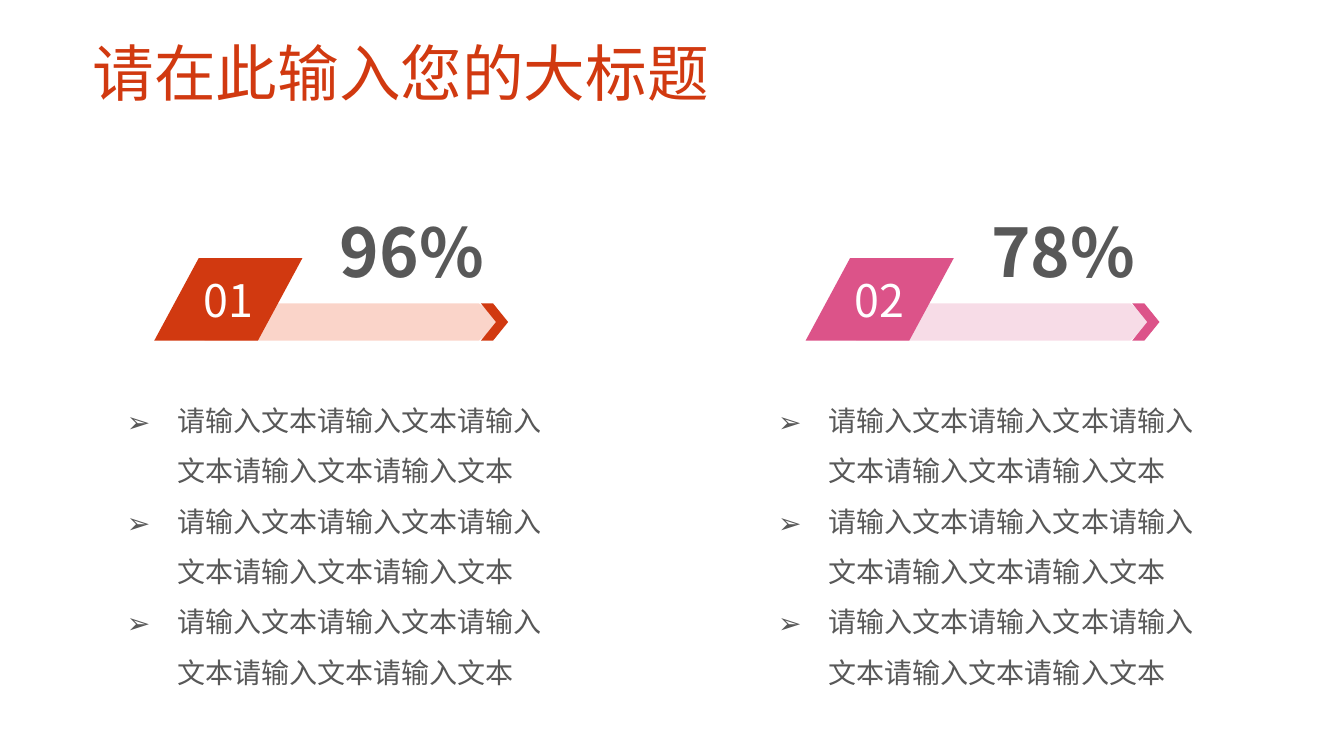
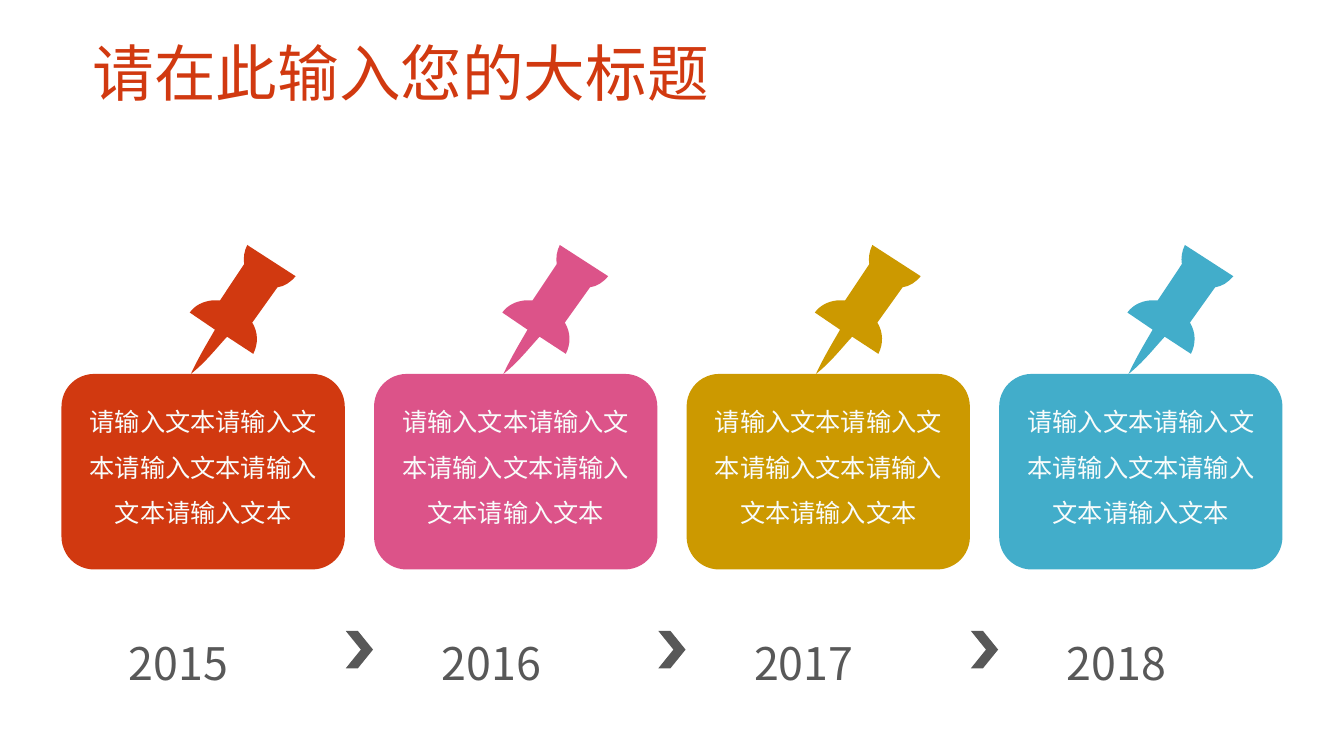
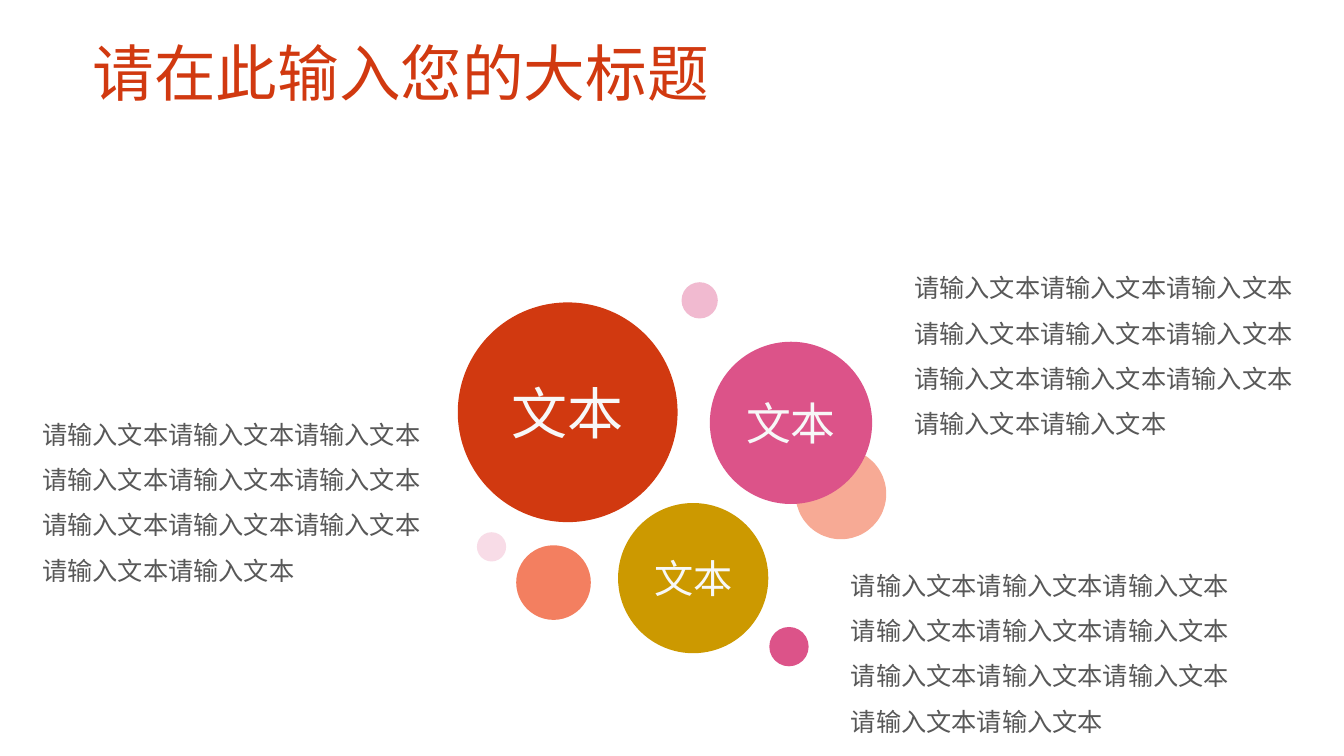
"""Build three infographic slides: progress bars, a pinned timeline and bubbles."""
import math
from dataclasses import dataclass

from lxml import etree
from pptx import Presentation
from pptx import util as u
from pptx.dml.color import RGBColor
from pptx.enum import shapes, text
from pptx.oxml.ns import qn

KIND = shapes.MSO_SHAPE
SIDE = text.PP_ALIGN
HOLD = text.MSO_ANCHOR
PHRASE = "请输入文本"


@dataclass(frozen=True)
class Theme:
    """Colours, font and type sizes shared by all slides."""
    font: str = "Noto Sans CJK SC"
    red: str = "D13910"
    pink: str = "DC5389"
    gold: str = "CC9900"
    blue: str = "42ADCA"
    coral: str = "F37F60"
    peach: str = "F7AA95"
    rose: str = "F1BAD0"
    grey: str = "585858"
    white: str = "FFFFFF"
    mist: str = "F9FCFB"
    pale: str = "F7F8F8"
    title: int = 44
    rate: int = 48
    label: int = 32
    list: int = 20
    body: int = 18


T = Theme()

TILT = 11.1
HUB = (2.37, 3.04)
PIN = [
    [(2.45, 2.43)], [(2.93, 2.74)],
    [(2.88, 2.8), (2.82, 2.84), (2.75, 2.85)], [(2.5, 3.2)],
    [(2.56, 3.3), (2.56, 3.41), (2.51, 3.51)], [(2.25, 3.34)],
    [(2.13, 3.47), (2.04, 3.59), (1.89, 3.71)],
    [(1.97, 3.54), (2.05, 3.41), (2.13, 3.27)], [(1.88, 3.1)],
    [(1.93, 3.03), (2.01, 2.99), (2.1, 2.98)],
    [(2.12, 2.98), (2.15, 2.98), (2.18, 2.98)], [(2.42, 2.62)],
    [(2.41, 2.56), (2.42, 2.49), (2.45, 2.43)],
]


def put(item, **vals):
    """Set each named attribute of an item."""
    for name, val in vals.items():
        setattr(item, name, val)


def paint(shape, color, alpha=100):
    """Give a shape a flat fill, or none, without line or shadow."""
    shape.shadow.inherit = False
    shape.line.fill.background()
    if color is None:
        shape.fill.background()
        return
    shape.fill.solid()
    shape.fill.fore_color.rgb = RGBColor.from_string(color)
    if alpha < 100:
        tint = shape.fill._xPr.find(".//" + qn("a:srgbClr"))
        etree.SubElement(tint, qn("a:alpha"), val=str(alpha * 1000))


def mark(para):
    """Add an arrow bullet with a hanging indent."""
    props = para._p.get_or_add_pPr()
    hang = u.Inches(0.5)
    props.set("marL", str(hang))
    props.set("indent", str(-hang))
    etree.SubElement(props, qn("a:buFont"), typeface=T.font)
    etree.SubElement(props, qn("a:buChar"), char="➢")


def write(shape, lines, size, color, align=SIDE.LEFT, anchor=HOLD.MIDDLE,
          space=1.0, bold=False, bullet=False):
    """Fill a shape with formatted paragraphs."""
    frame = shape.text_frame
    put(frame, word_wrap=True, vertical_anchor=anchor)
    for i, line in enumerate(lines):
        para = frame.add_paragraph() if i else frame.paragraphs[0]
        put(para, alignment=align, line_spacing=space)
        if bullet:
            mark(para)
        run = para.add_run()
        run.text = line
        put(run.font, size=u.Pt(size), bold=bold, name=T.font)
        run.font.color.rgb = RGBColor.from_string(color)
        etree.SubElement(run._r.get_or_add_rPr(), qn("a:ea"), typeface=T.font)


def block(tree, kind, box, color, alpha=100, adj=None):
    """Add a flat preset shape."""
    shape = tree.add_shape(kind, *map(u.Inches, box))
    paint(shape, color, alpha)
    if adj is not None:
        shape.adjustments[0] = adj
    return shape


def note(tree, box, lines, size, color=T.grey, **style):
    """Add a text box and return it."""
    shape = tree.add_textbox(*map(u.Inches, box))
    write(shape, lines, size, color, **style)
    return shape


def arrow(tree, left, top, color):
    """Add a small chevron."""
    block(tree, KIND.CHEVRON, (left, top, 0.27, 0.37), color, adj=0.555)


def trace(tree, steps, color, alpha=100):
    """Draw a closed outline of line steps and cubic curve steps."""
    steps = [[(u.Inches(x), u.Inches(y)) for x, y in step] for step in steps]
    path = tree.build_freeform(*steps[0][0], scale=1.0)
    path.add_line_segments([step[-1] for step in steps[1:]], close=True)
    shape = path.convert_to_shape()
    paint(shape, color, alpha)
    for line, step in zip(list(shape._element.iter(qn("a:lnTo"))), steps[1:]):
        if len(step) == 3:
            bend = etree.Element(qn("a:cubicBezTo"))
            for x, y in step:
                etree.SubElement(bend, qn("a:pt"), x=str(x - shape.left),
                                 y=str(y - shape.top))
            line.getparent().replace(line, bend)
    return shape


def turn(spot, shift):
    """Turn a point about the pin's hub and move it right."""
    dx, dy = spot[0] - HUB[0], spot[1] - HUB[1]
    cos, sin = math.cos(math.radians(TILT)), math.sin(math.radians(TILT))
    return (HUB[0] + dx * cos - dy * sin + shift, HUB[1] + dx * sin + dy * cos)


def pin(tree, shift, color):
    """Draw a tilted pushpin moved right by a distance."""
    steps = [[turn(spot, shift) for spot in step] for step in PIN]
    trace(tree, steps, color).rotation = 360 - TILT


def page(deck):
    """Add a titled blank slide and return its shapes."""
    tree = deck.slides.add_slide(deck.slide_layouts[6]).shapes
    note(tree, (0.82, 0.12, 11.68, 1.02), ["请在此输入您的大标题"], T.title,
         T.red, anchor=HOLD.BOTTOM, space=0.9)
    return tree


def gauge(tree, left, num, rate, color, tint):
    """Add a numbered progress bar with its bullet list."""
    ends = ((3.59, 3.01), (3.82, 3.19), (3.59, 3.38), (0.87, 3.38), (0.87, 3.01))
    trace(tree, [[(left + x, y)] for x, y in ends], tint, 50)
    arrow(tree, left + 3.61, 3.01, color)
    label = note(tree, (left + 1.76, 2.04, 2.33, 0.91), [rate], T.rate,
                 align=SIDE.CENTER, anchor=HOLD.TOP, bold=True)
    label.text_frame.auto_size = text.MSO_AUTO_SIZE.SHAPE_TO_FIT_TEXT
    note(tree, (left, 3.6, 4.56, 3.47), [PHRASE * 5] * 3, T.list,
         space=1.5, bullet=True)
    badge = block(tree, KIND.PARALLELOGRAM, (left + 0.37, 2.56, 1.47, 0.82),
                  color, adj=0.539)
    write(badge, [num], T.label, T.white, SIDE.CENTER)


def card(tree, shift, year, color):
    """Add a pinned card with its year."""
    pin(tree, shift, color)
    shape = block(tree, KIND.ROUNDED_RECTANGLE,
                  (0.61 + shift, 3.71, 2.81, 1.94), color)
    pad = u.Inches(0.08)
    put(shape.text_frame, margin_left=pad, margin_right=pad,
        margin_top=pad, margin_bottom=pad)
    write(shape, [PHRASE * 5], T.body, T.mist, SIDE.CENTER, HOLD.TOP, 1.5)
    note(tree, (1.18 + shift, 6.12, 1.68, 0.64), [year], T.label,
         align=SIDE.JUSTIFY, space=1.5)


def ball(tree, left, top, width, color, alpha=100, size=None):
    """Add a circle, labelled when a type size is given."""
    shape = block(tree, KIND.OVAL, (left, top, width, width), color, alpha)
    if size:
        write(shape, ["文本"], size, T.pale, SIDE.CENTER)


def bars(deck):
    """Build the progress slide."""
    tree = page(deck)
    gauge(tree, 1.16, "01", "96%", T.red, T.peach)
    gauge(tree, 7.62, "02", "78%", T.pink, T.rose)


def years(deck):
    """Build the timeline slide."""
    tree = page(deck)
    pitch = 3.1
    hues = (T.red, T.pink, T.gold, T.blue)
    for i, hue in enumerate(hues):
        card(tree, i * pitch, str(2015 + i), hue)
    for i in range(len(hues) - 1):
        arrow(tree, 3.43 + i * pitch, 6.26, T.grey)


def balls(deck):
    """Build the bubble slide."""
    tree = page(deck)
    group = tree.add_group_shape().shapes
    for spot in (
        (7.89, 4.45, 0.9, T.peach),
        (6.76, 2.8, 0.36, T.rose),
        (4.73, 5.28, 0.29, T.pink, 20),
        (7.63, 6.22, 0.39, T.pink),
        (4.54, 3, 2.18, T.red, 100, 40),
        (5.12, 5.41, 0.74, T.coral),
        (7.04, 3.39, 1.61, T.pink, 100, 32),
        (6.13, 4.99, 1.49, T.gold, 100, 28),
    ):
        ball(group, *spot)
    for left, top in ((8.97, 2.46), (8.34, 5.41), (0.32, 3.91)):
        panel = block(tree, KIND.ROUNDED_RECTANGLE, (left, top, 4.12, 1.99),
                      None, adj=0)
        write(panel, [PHRASE * 11], T.body, T.grey, space=1.5)


def main():
    """Build and save the deck."""
    deck = Presentation()
    put(deck, slide_width=u.Inches(13.33), slide_height=u.Inches(7.5))
    for build in (bars, years, balls):
        build(deck)
    deck.save("out.pptx")


if __name__ == "__main__":
    main()
